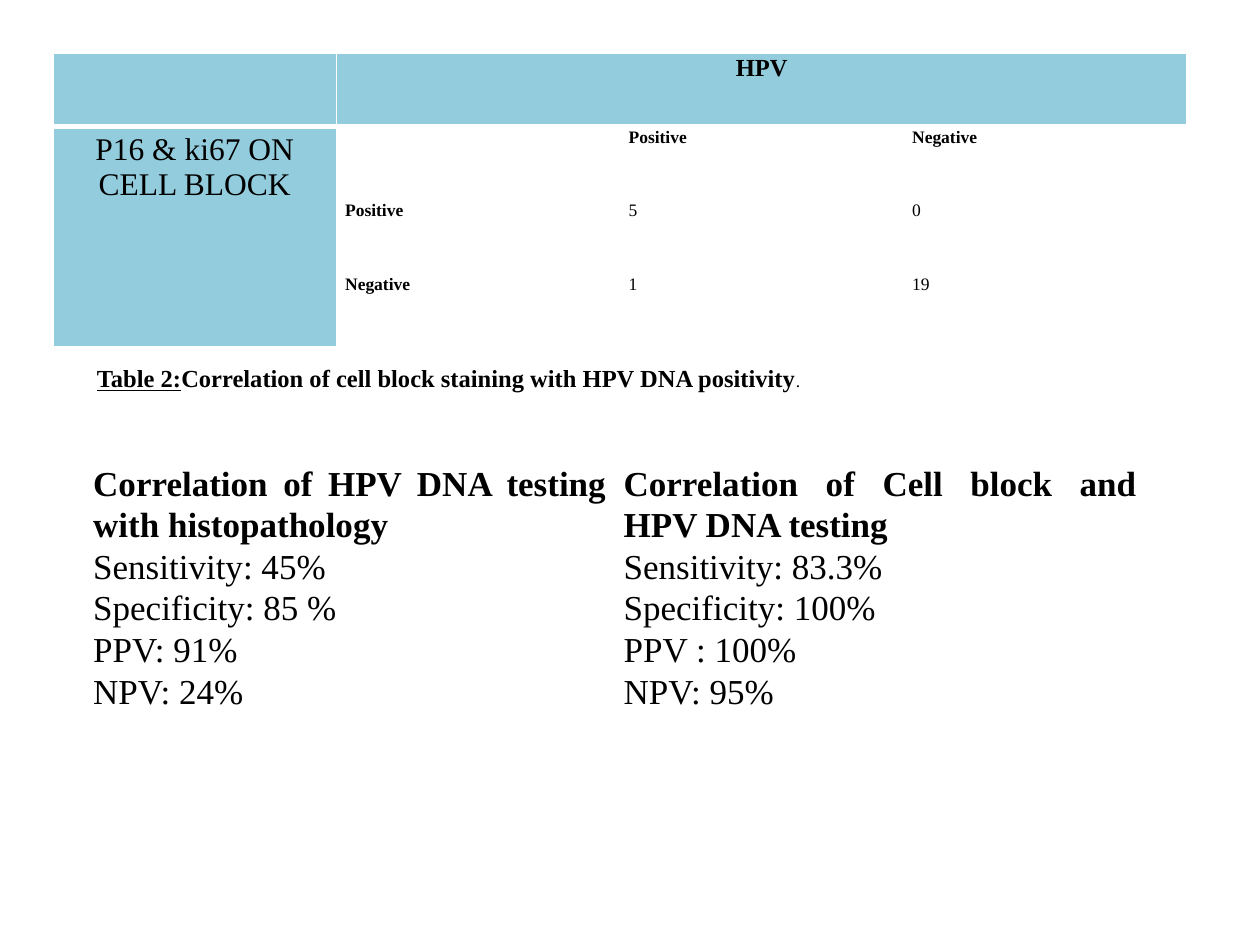
from dataclasses import dataclass

from lxml.etree import SubElement
from pptx import Presentation
from pptx.dml.color import RGBColor
from pptx.enum.text import MSO_ANCHOR, MSO_AUTO_SIZE, PP_ALIGN as Align
from pptx.oxml.ns import qn
from pptx.util import Inches, Pt

FONT = "Times New Roman"
COLORS = {"text": "000000", "header": "93CDDD", "plain": "FFFFFF", "border": "FFFFFF"}


@dataclass
class Run:
    text: str
    size: float
    bold: bool = False
    underline: bool = False


@dataclass
class TableBox:
    left: float
    top: float
    col_width: float
    row_height: float
    rows: int
    cols: int


def add_run(p, run: Run) -> None:
    r = p.add_run()
    r.text = run.text
    r.font.name, r.font.size = FONT, Pt(run.size)
    r.font.bold, r.font.underline = run.bold, run.underline
    r.font.color.rgb = RGBColor.from_string(COLORS["text"])


def add_table(slide, box: TableBox):
    table = slide.shapes.add_table(
        box.rows, box.cols, Inches(box.left), Inches(box.top),
        Inches(box.col_width * box.cols), Inches(box.row_height * box.rows)).table
    table.first_row = table.horz_banding = False
    for col in table.columns:
        col.width = Inches(box.col_width)
    for row in table.rows:
        row.height = Inches(box.row_height)
    return table


def set_borders(cell, bottom: float = 1) -> None:
    """Draw the four cell edges; they must precede the fill in tcPr."""
    props = cell._tc.get_or_add_tcPr()
    for i, (side, width) in enumerate(zip("LRTB", (1, 1, 1, bottom))):
        ln = SubElement(props, qn(f"a:ln{side}"), w=str(Pt(width)))
        fill = SubElement(ln, qn("a:solidFill"))
        SubElement(fill, qn("a:srgbClr"), val=COLORS["border"])
        props.insert(i, ln)


def set_fill(cell, color: str) -> None:
    cell.fill.solid()
    cell.fill.fore_color.rgb = RGBColor.from_string(COLORS[color])


def write_cell(cell, runs: list[Run], align=Align.JUSTIFY) -> None:
    """Write one paragraph per run with tight cell margins."""
    cell.margin_left = cell.margin_right = Inches(0.07)
    cell.margin_top = cell.margin_bottom = 0
    tf = cell.text_frame
    for i, run in enumerate(runs):
        p = tf.add_paragraph() if i else tf.paragraphs[0]
        p.alignment, p.line_spacing = align, 1.07
        add_run(p, run)


def add_hpv_table(slide) -> None:
    table = add_table(slide, TableBox(0.42, 0.42, 2.25, 0.583, 4, 4))
    for i in range(4):
        for j in range(4):
            cell = table.cell(i, j)
            set_fill(cell, "header" if i == 0 or j == 0 else "plain")
            set_borders(cell, bottom=3 if i == 0 else 1)
    table.cell(0, 1).merge(table.cell(0, 3))
    table.cell(1, 0).merge(table.cell(3, 0))

    write_cell(table.cell(0, 1), [Run("HPV", 14, bold=True)], Align.CENTER)
    p = table.cell(1, 0).text_frame.paragraphs[0]
    p.alignment = Align.CENTER
    add_run(p, Run("P16 & ki67 ON CELL BLOCK", 18))

    counts = [["", "Positive", "Negative"], ["Positive", "5", "0"], ["Negative", "1", "19"]]
    for i, row in enumerate(counts, 1):
        for j, text in enumerate(row, 1):
            if text:
                write_cell(table.cell(i, j), [Run(text, 10, bold=i == 1 or j == 1)])


def add_caption(slide) -> None:
    tf = slide.shapes.add_textbox(Inches(0.67), Inches(2.83), Inches(5.92), Inches(0.34)).text_frame
    tf.word_wrap = True
    tf.auto_size = MSO_AUTO_SIZE.SHAPE_TO_FIT_TEXT
    tf.vertical_anchor = MSO_ANCHOR.MIDDLE
    for run in (Run("Table 2:", 14, bold=True, underline=True),
                Run("Correlation of cell block staining with HPV DNA positivity", 14, bold=True),
                Run(".", 10)):
        add_run(tf.paragraphs[0], run)


def add_results_table(slide) -> None:
    results = {
        "Correlation of HPV DNA testing with histopathology":
            ["Sensitivity: 45%", "Specificity: 85 %", "PPV: 91%", "NPV: 24%"],
        "Correlation of Cell block and HPV DNA testing":
            ["Sensitivity: 83.3%", "Specificity: 100%", "PPV : 100%", "NPV: 95%"],
    }
    table = add_table(slide, TableBox(0.67, 3.67, 4.21, 2.67, 1, 2))
    for cell, (title, lines) in zip(table.rows[0].cells, results.items()):
        cell.fill.background()
        write_cell(cell, [Run(title, 20, bold=True)] + [Run(line, 20) for line in lines])


def main() -> None:
    prs = Presentation()
    prs.slide_width, prs.slide_height = Inches(10), Inches(7.5)
    s = prs.slides.add_slide(prs.slide_layouts[6])
    add_hpv_table(s)      # Cell block against HPV counts
    add_caption(s)        # Caption under the counts
    add_results_table(s)  # Test performance, side by side
    prs.save("out.pptx")


if __name__ == "__main__":
    main()
